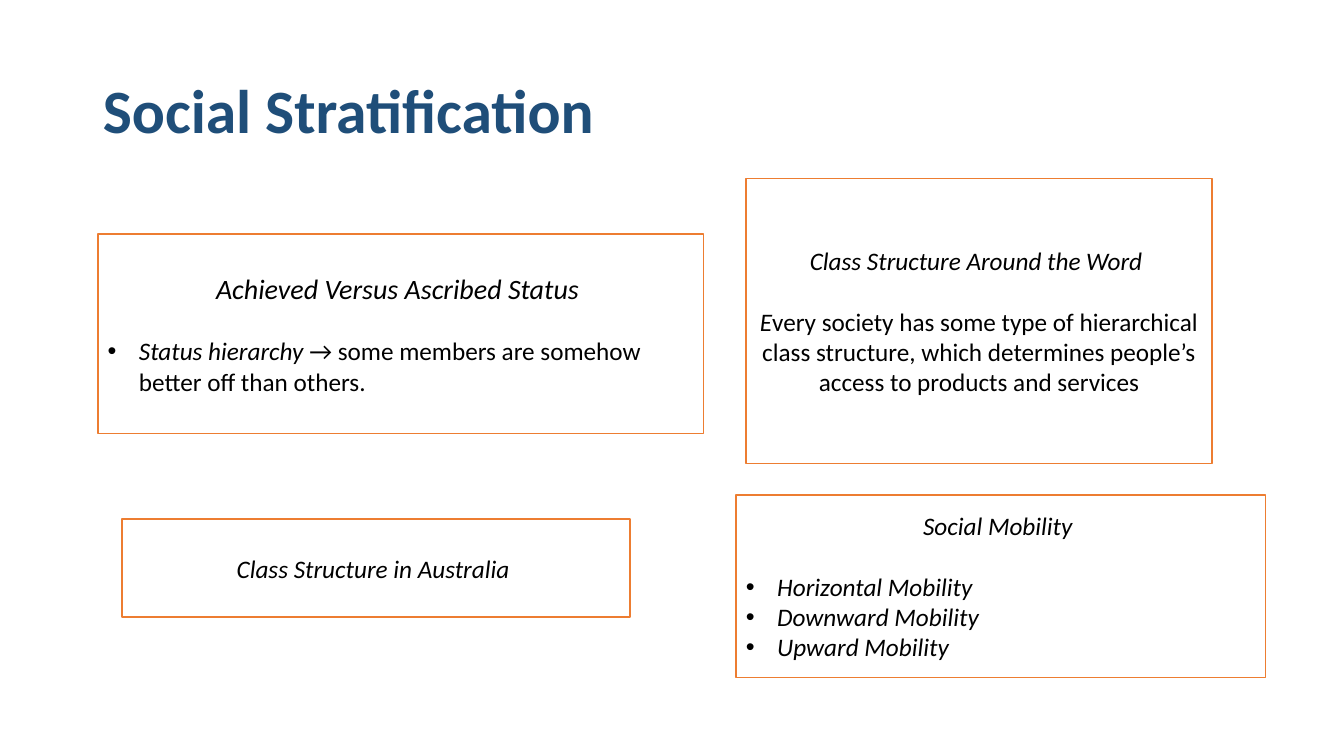
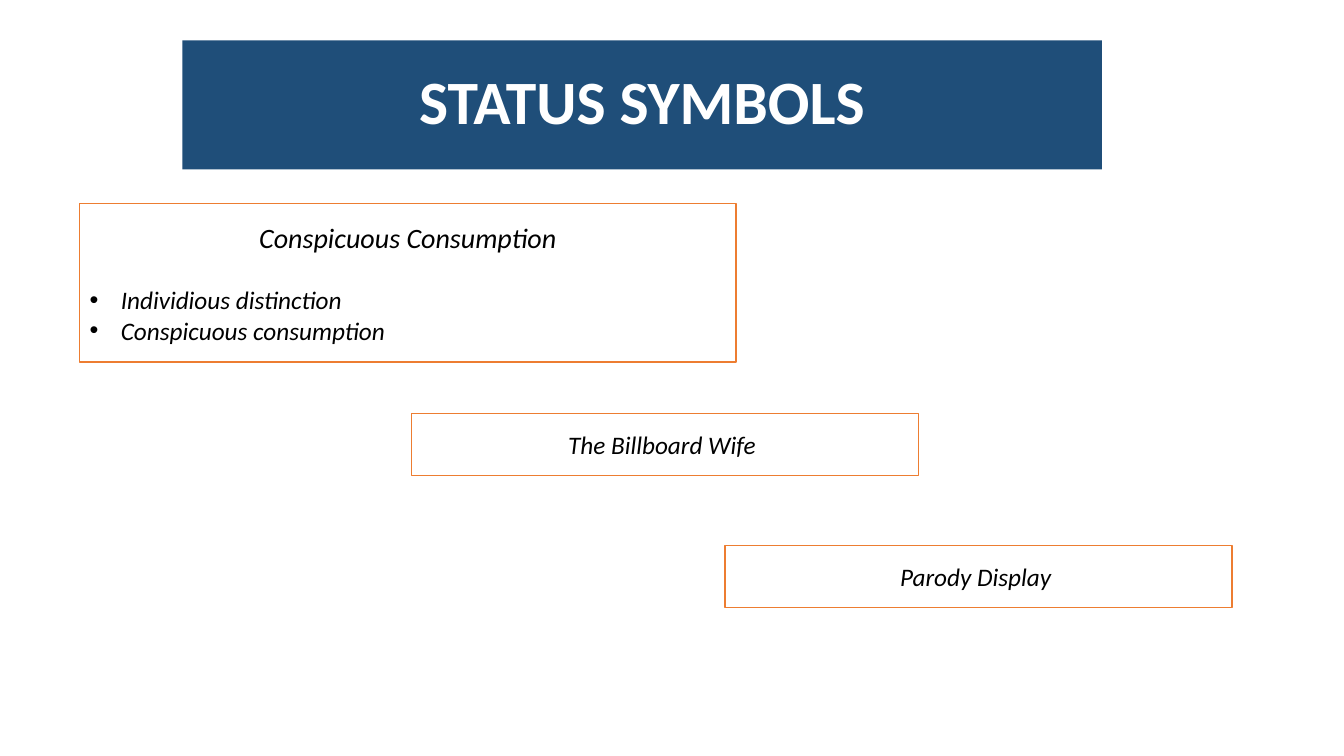
from lxml import etree
from pptx import Presentation
from pptx.dml.color import RGBColor
from pptx.enum.shapes import MSO_SHAPE
from pptx.enum.text import MSO_ANCHOR, MSO_AUTO_SIZE, PP_ALIGN
from pptx.oxml.ns import qn
from pptx.util import Inches, Pt

RECTANGLE = MSO_SHAPE.RECTANGLE
MIDDLE = MSO_ANCHOR.MIDDLE
NO_AUTOFIT = MSO_AUTO_SIZE.NONE
LEFT, CENTER = PP_ALIGN.LEFT, PP_ALIGN.CENTER

COLORS = {"navy": "1F4E79", "orange": "ED7D31", "white": "FFFFFF", "black": "000000"}
FONT = "Calibri"
BULLET_INDENT = Inches(0.31)
HEADING_GAP = Pt(22)


def color(name):
    return RGBColor.from_string(COLORS[name])


def write(paragraph, text, size=18, ink="black", bold=False, italic=True,
          align=LEFT, line_spacing=None, space_after=None, bullet=False):
    paragraph.alignment = align
    paragraph.line_spacing = line_spacing
    paragraph.space_after = space_after
    run = paragraph.add_run()
    run.text = text
    run.font.name = FONT
    run.font.size = Pt(size)
    run.font.bold = bold
    run.font.italic = italic
    run.font.color.rgb = color(ink)
    properties = paragraph._p.get_or_add_pPr()
    if bullet and properties.find(qn("a:buChar")) is None:
        properties.set("marL", str(BULLET_INDENT))
        properties.set("indent", str(-BULLET_INDENT))
        etree.SubElement(properties, qn("a:buFont")).set("typeface", "Arial")
        etree.SubElement(properties, qn("a:buChar")).set("char", "•")


bulleted = {"bullet": True}
centered = {"align": CENTER}

slides = [
    {
        "title": "Social Stratification",
        "place": (0.92, 0.4, 11.5, 1.45),
        "band": None,
        "format": {"ink": "navy", "align": LEFT},
        "topics": [
            ((0.97, 2.32, 6.01, 1.98), "Achieved Versus Ascribed Status ", 20, bulleted,
             [[("Status hierarchy ", True),
               ("→ some members are somehow better off than others.", False)]]),
            ((1.21, 5.15, 5.04, 0.97), "Class Structure in Australia ", 18, centered, []),
            ((7.4, 1.77, 4.62, 2.83), "Class Structure Around the Word ", 18, centered,
             [[("E", True),
               ("very society has some type of hierarchical class structure, "
                "which determines people’s access to products and services", False)]]),
            ((7.3, 4.91, 5.25, 1.81), "Social Mobility ", 18, bulleted,
             [[("Horizontal Mobility", True)],
              [("Downward Mobility", True)],
              [("Upward Mobility", True)]]),
        ],
    },
    {
        "title": "STATUS SYMBOLS",
        "place": (1.81, 0.4, 9.12, 1.28),
        "band": "navy",
        "format": {"ink": "white", "align": CENTER},
        "topics": [
            ((0.79, 2.02, 6.51, 1.57), "Conspicuous Consumption", 20, bulleted,
             [[("Individious distinction", True)],
              [("Conspicuous consumption", True)]]),
            ((4.08, 4.1, 5.03, 0.62), "The Billboard Wife ", 18, centered, []),
            ((7.19, 5.41, 5.03, 0.62), "Parody Display ", 18, centered, []),
        ],
    },
]

deck = Presentation()
deck.slide_width = Inches(13.33)
deck.slide_height = Inches(7.5)
title_only = deck.slide_layouts[5]

for content in slides:
    slide = deck.slides.add_slide(title_only)
    title = slide.shapes.title
    title.left, title.top, title.width, title.height = map(Inches, content["place"])
    if content["band"]:
        title.fill.solid()
        title.fill.fore_color.rgb = color(content["band"])
    title.text_frame.auto_size = NO_AUTOFIT
    title.text_frame.vertical_anchor = MIDDLE
    write(title.text_frame.paragraphs[0], content["title"], size=44, bold=True,
          italic=False, line_spacing=0.9, **content["format"])

    for place, heading, heading_size, body_format, body in content["topics"]:
        panel = slide.shapes.add_shape(RECTANGLE, *map(Inches, place))
        panel.shadow.inherit = False
        panel.fill.solid()
        panel.fill.fore_color.rgb = color("white")
        panel.line.color.rgb = color("orange")
        panel.line.width = Pt(1)
        frame = panel.text_frame
        frame.word_wrap = True
        frame.vertical_anchor = MIDDLE
        write(frame.paragraphs[0], heading, size=heading_size, align=CENTER,
              space_after=HEADING_GAP if body else None)
        for pieces in body:
            paragraph = frame.add_paragraph()
            for text, italic in pieces:
                write(paragraph, text, italic=italic, **body_format)

deck.save("out.pptx")
